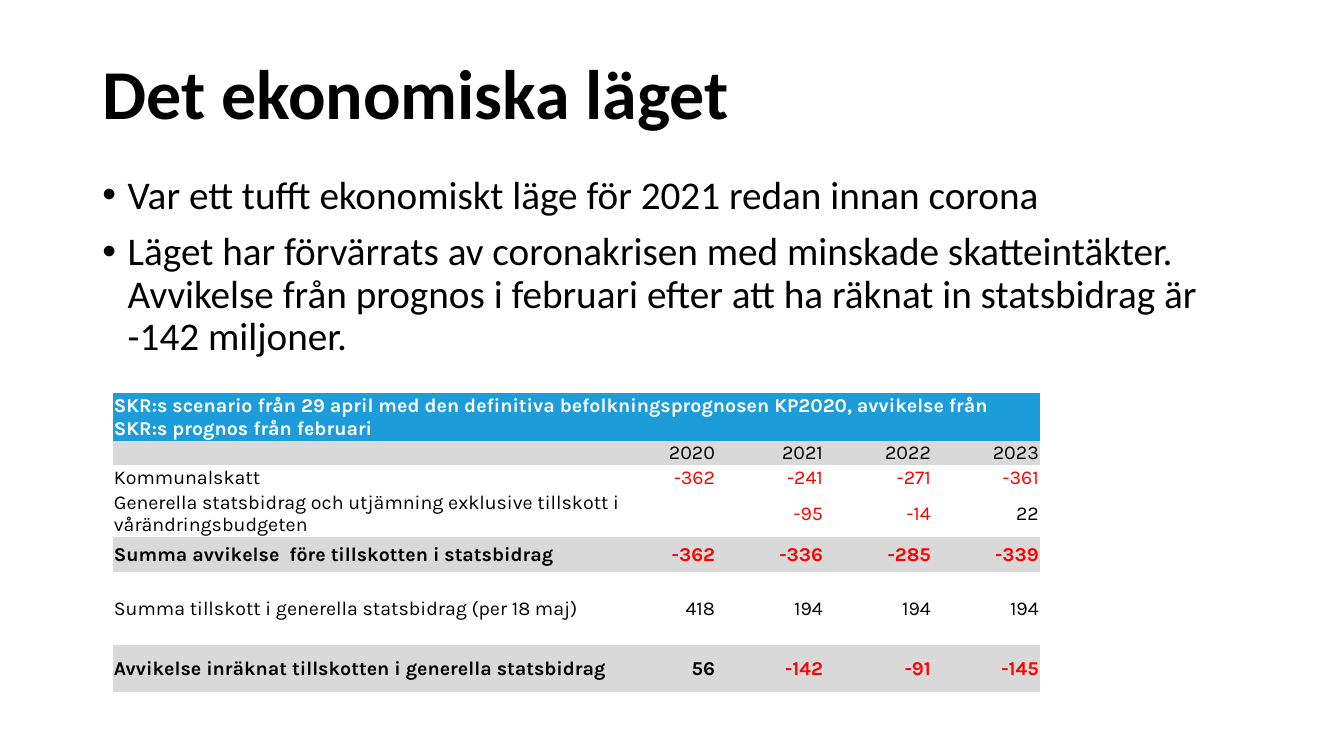
import pptx
import pptx.util
import pptx.dml.color
import pptx.enum.text
import pptx.oxml.ns
import lxml.etree

Cm = pptx.util.Cm
Pt = pptx.util.Pt
ANCHOR = pptx.enum.text.MSO_ANCHOR
ALIGN = pptx.enum.text.PP_ALIGN
qn = pptx.oxml.ns.qn

BLACK, WHITE, RED, BLUE, GREY = "000000", "FFFFFF", "FF0000", "1C9CD9", "D9D9D9"
NO_TABLE_STYLE = "{2D5ABB26-0587-4C30-8999-92F81FD0307C}"


def rgb(value):
    return pptx.dml.color.RGBColor.from_string(value)


def write(p, text, font="Calibri", size=28, color=BLACK, bold=False,
          align=ALIGN.LEFT, spacing=1.0, before=0):
    p.text = text
    p.alignment = align
    p.line_spacing = spacing
    p.space_before = Pt(before)
    for r in p.runs:
        r.font.name = font
        r.font.size = Pt(size)
        r.font.bold = bold
        r.font.color.rgb = rgb(color)
    if not text:
        end = lxml.etree.SubElement(p._p, qn("a:endParaRPr"))
        end.set("sz", str(size * 100))


class Deck:
    body_font = "Calibri"
    table_font = "Karla"

    def __init__(self):
        self.prs = pptx.Presentation()
        self.prs.slide_width = Cm(33.87)
        self.prs.slide_height = Cm(19.05)
        self.s = self.prs.slides.add_slide(self.prs.slide_layouts[6])

    def text_frame(self, x, y, w, h, anchor):
        tf = self.s.shapes.add_textbox(Cm(x), Cm(y), Cm(w), Cm(h)).text_frame
        tf.word_wrap = True
        tf.vertical_anchor = anchor
        return tf

    def title(self, text, x, y, w, h):
        tf = self.text_frame(x, y, w, h, ANCHOR.MIDDLE)
        write(tf.paragraphs[0], text, font=self.body_font, size=50, bold=True, spacing=0.9)

    def bullets(self, items, x, y, w, h):
        tf = self.text_frame(x, y, w, h, ANCHOR.TOP)
        for i, item in enumerate(items):
            p = tf.add_paragraph() if i else tf.paragraphs[0]
            write(p, item, font=self.body_font, spacing=0.9, before=10)
            pPr = p._p.get_or_add_pPr()
            pPr.set("marL", str(Cm(0.64)))
            pPr.set("indent", str(-Cm(0.64)))
            lxml.etree.SubElement(pPr, qn("a:buFont")).set("typeface", "Arial")
            lxml.etree.SubElement(pPr, qn("a:buChar")).set("char", "•")

    def cell(self, cell, text, fill=None, **fmt):
        cell.margin_left = cell.margin_right = cell.margin_top = Cm(0.02)
        cell.margin_bottom = 0
        cell.vertical_anchor = ANCHOR.MIDDLE
        if fill:
            cell.fill.solid()
            cell.fill.fore_color.rgb = rgb(fill)
        else:
            cell.fill.background()
        write(cell.text_frame.paragraphs[0], text, font=self.table_font, size=14, **fmt)

    def table(self, heading, rows, x, y, widths, heights):
        frame = self.s.shapes.add_table(len(heights), len(widths), Cm(x), Cm(y),
                                        Cm(sum(widths)), Cm(sum(heights)))
        next(frame.element.iter(qn("a:tableStyleId"))).text = NO_TABLE_STYLE
        table = frame.table
        table.first_row = table.horz_banding = False
        for column, width in zip(table.columns, widths):
            column.width = Cm(width)
        for row, height in zip(table.rows, heights):
            row.height = Cm(height)
        table.cell(0, 0).merge(table.cell(0, len(widths) - 1))
        self.cell(table.cell(0, 0), heading, fill=BLUE, color=WHITE, bold=True)
        for i, (fill, bold, values) in enumerate(rows, 1):
            for j, value in enumerate(values):
                self.cell(table.cell(i, j), value, fill=fill, bold=bold,
                          color=RED if value.startswith("-") else BLACK,
                          align=ALIGN.RIGHT if j else ALIGN.LEFT)

    def save(self):
        self.prs.save("out.pptx")


def main():
    deck = Deck()
    deck.title("Det ekonomiska läget", 2.33, 0.6, 29.21, 3.68)
    deck.bullets([
        "Var ett tufft ekonomiskt läge för 2021 redan innan corona",
        "Läget har förvärrats av coronakrisen med minskade skatteintäkter. "
        "Avvikelse från prognos i februari efter att ha räknat in statsbidrag är \n"
        "-142 miljoner.",
    ], 2.33, 4.3, 29.21, 12.09)

    empty = (None, False, [""] * 5)
    rows = [
        (GREY, False, ["", "2020", "2021", "2022", "2023"]),
        (None, False, ["Kommunalskatt", "-362", "-241", "-271", "-361"]),
        (None, False, ["Generella statsbidrag och utjämning exklusive tillskott i "
                       "vårändringsbudgeten", "", "-95", "-14", "22"]),
        (GREY, True, ["Summa avvikelse  före tillskotten i statsbidrag",
                      "-362", "-336", "-285", "-339"]),
        empty,
        (None, False, ["Summa tillskott i generella statsbidrag (per 18 maj)",
                       "418", "194", "194", "194"]),
        empty,
        (GREY, True, ["Avvikelse inräknat tillskotten i generella statsbidrag",
                      "56", "-142", "-91", "-145"]),
    ]
    deck.table("SKR:s scenario från 29 april med den definitiva befolkningsprognosen "
               "KP2020, avvikelse från SKR:s prognos från februari",
               rows, 2.85, 9.9, [12.95, 2.24] + [2.72] * 3,
               [1.2, 0.6, 0.6, 1.2, 0.86, 0.59, 0.6, 0.59, 1.2])
    deck.save()


if __name__ == "__main__":
    main()
